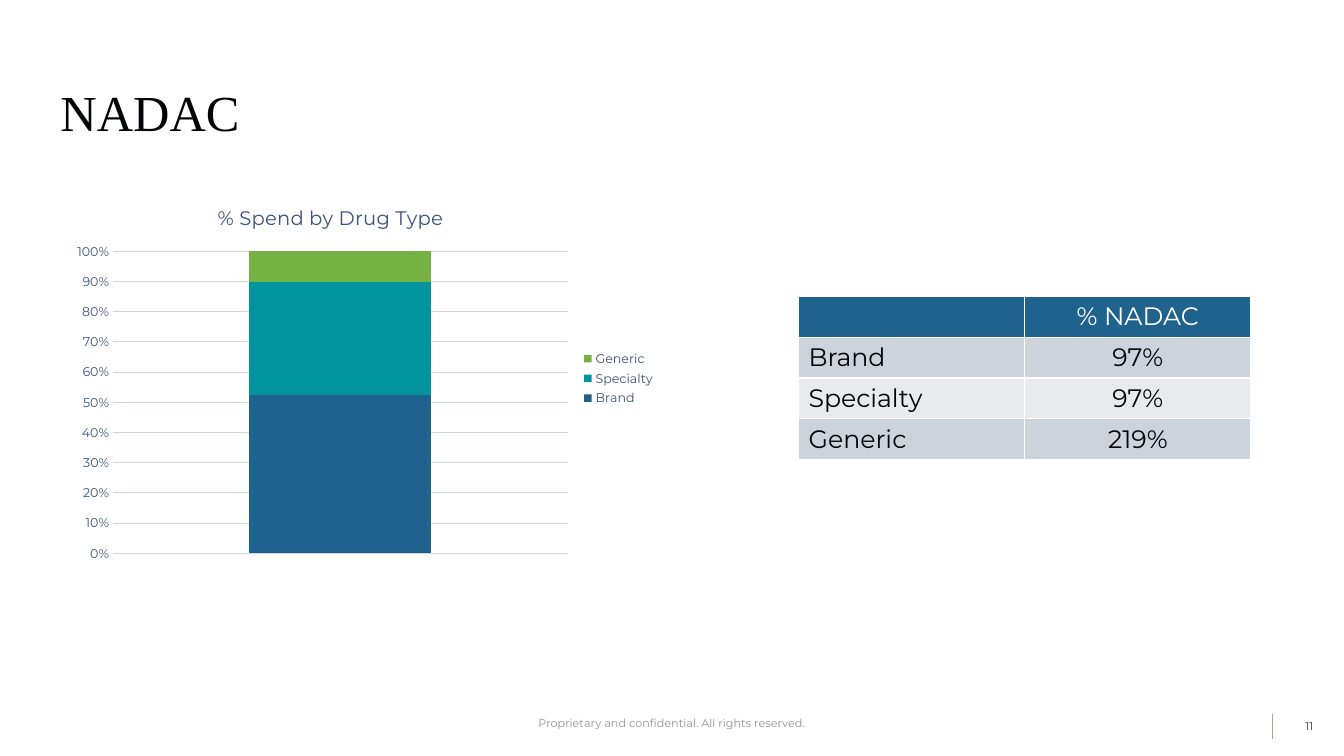
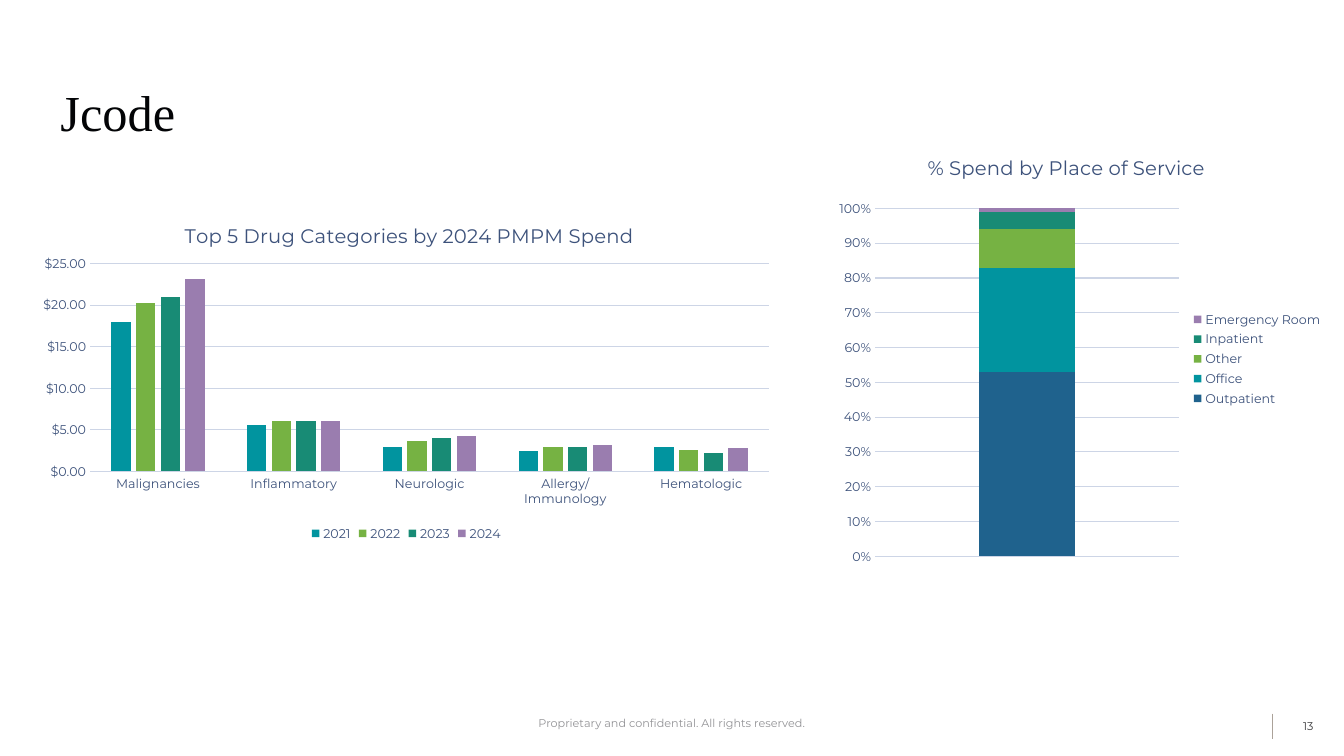
from pptx import Presentation
from pptx.chart.data import CategoryChartData
from pptx.dml.color import RGBColor
from pptx.enum.chart import XL_CHART_TYPE, XL_LEGEND_POSITION, XL_TICK_MARK
from pptx.enum.shapes import MSO_CONNECTOR
from pptx.enum.text import MSO_ANCHOR, PP_ALIGN
from pptx.oxml.ns import qn
from pptx.util import Pt
from lxml.etree import SubElement

SANS = "Montserrat"
SERIF = "Times New Roman"
INK = "030406"
LABEL = "3D527B"
GRID = "CDD5E6"
WHITE = "FFFFFF"
NAVY, TEAL, LIME, GREEN, PURPLE = "1F628D", "01949F", "76B243", "188B75", "9A7DAF"
BANDS = ("CDD3DB", "E8EAEE")
FOOTER = "Proprietary and confidential. All rights reserved."

SLIDES = [
    {
        "title": "NADAC",
        "number": "11",
        "charts": [
            {
                "title": "% Spend by Drug Type",
                "kind": XL_CHART_TYPE.COLUMN_STACKED_100,
                "frame": (46.8, 133.9, 428.4, 272.9),
                "title_at": (152.9, 143.5),
                "plot": (80.7, 179.6, 325, 215.7),
                "categories": ["1"],
                "series": [
                    ("Brand", [52], NAVY),
                    ("Specialty", [37], TEAL),
                    ("Generic", [10], LIME),
                ],
                "bars": {"gap_width": 150, "overlap": 100},
                "scale": {"minimum_scale": 0},
                "number_format": "0%",
                "legend": XL_LEGEND_POSITION.RIGHT,
                "show_categories": False,
            },
        ],
        "table": {
            "at": (570.4, 211.6),
            "column_width": 161.6,
            "row_height": 29.2,
            "rows": [
                ("", "% NADAC"),
                ("Brand", "97%"),
                ("Specialty", "97%"),
                ("Generic", "219%"),
            ],
        },
    },
    {
        "title": "Jcode",
        "number": "13",
        "charts": [
            {
                "title": "Top 5 Drug Categories by 2024 PMPM Spend",
                "kind": XL_CHART_TYPE.COLUMN_CLUSTERED,
                "frame": (20.2, 144.7, 540, 244.8),
                "title_at": (129.3, 156.4),
                "plot": (64.3, 188.2, 485, 148.6),
                "categories": ["Malignancies", "Inflammatory", "Neurologic",
                               "Allergy/Immunology", "Hematologic"],
                "series": [
                    ("2021", [17.9, 5.6, 2.9, 2.5, 2.9], TEAL),
                    ("2022", [20.3, 6.1, 3.7, 2.9, 2.6], LIME),
                    ("2023", [21, 6, 4, 2.9, 2.2], GREEN),
                    ("2024", [23.1, 6.1, 4.3, 3.2, 2.8], PURPLE),
                ],
                "bars": {"gap_width": 219, "overlap": -27},
                "scale": {"minimum_scale": 0, "maximum_scale": 25, "major_unit": 5},
                "number_format": '"$"#,##0.00',
                "legend": XL_LEGEND_POSITION.BOTTOM,
                "show_categories": True,
            },
            {
                "title": "% Spend by Place of Service",
                "kind": XL_CHART_TYPE.COLUMN_STACKED_100,
                "frame": (592.6, 103, 359.3, 306.7),
                "title_at": (660, 107.9),
                "plot": (625, 148.9, 217.1, 248.6),
                "categories": ["1"],
                "series": [
                    ("Outpatient", [53], NAVY),
                    ("Office", [30], TEAL),
                    ("Other", [11], LIME),
                    ("Inpatient", [5], GREEN),
                    ("Emergency Room", [1], PURPLE),
                ],
                "bars": {"gap_width": 219, "overlap": 100},
                "scale": {"minimum_scale": 0},
                "number_format": "0%",
                "legend": XL_LEGEND_POSITION.RIGHT,
                "show_categories": False,
            },
        ],
    },
]


def color(value):
    return RGBColor.from_string(value)


def points(values):
    return [Pt(value) for value in values]


def apply(target, values):
    for name, value in values.items():
        setattr(target, name, value)


def style_font(font, size, ink, face=SANS):
    apply(font, {"name": face, "size": Pt(size), "bold": False})
    font.color.rgb = color(ink)


def fill_solid(fill, value):
    fill.solid()
    fill.fore_color.rgb = color(value)


def style_line(line, value, width):
    line.color.rgb = color(value)
    line.width = Pt(width)


def add_text(page, frame, text, size, ink, face=SANS, align=PP_ALIGN.LEFT,
             anchor=MSO_ANCHOR.MIDDLE, margins=(0, 0, 0, 0)):
    box = page.shapes.add_textbox(*points(frame))
    sides = ("margin_left", "margin_top", "margin_right", "margin_bottom")
    apply(box.text_frame, {"word_wrap": True, "vertical_anchor": anchor,
                           **dict(zip(sides, points(margins)))})
    para = box.text_frame.paragraphs[0]
    para.alignment = align
    span = para.add_run()
    span.text = text
    style_font(span.font, size, ink, face)


def add_frame(page, title, number):
    add_text(page, (43.2, 18, 864, 86.4), title, 36, INK, SERIF,
             anchor=MSO_ANCHOR.BOTTOM, margins=(0, 3.6, 0, 3.6))
    add_text(page, (330, 512, 300, 9.4), FOOTER, 8, "939396", align=PP_ALIGN.CENTER)
    add_text(page, (909.4, 509.8, 28.8, 18), number, 8, "39393B", align=PP_ALIGN.RIGHT)
    rule = page.shapes.add_connector(MSO_CONNECTOR.STRAIGHT,
                                     *points((908.6, 509.8, 908.6, 527.8)))
    style_line(rule.line, "ABA299", 0.5)
    SubElement(rule._element.spPr, qn("a:effectLst"))


def place(parent, index, settings):
    layout = parent.find(qn("c:layout"))
    if layout is None:
        layout = parent.makeelement(qn("c:layout"))
        parent.insert(index, layout)
    manual = SubElement(layout, qn("c:manualLayout"))
    for name, value in settings.items():
        SubElement(manual, qn("c:" + name)).set("val", str(value))


def add_chart(page, info):
    data = CategoryChartData()
    data.categories = info["categories"]
    for name, values, _ in info["series"]:
        data.add_series(name, values)
    left, top, width, height = info["frame"]
    chart = page.shapes.add_chart(info["kind"], *points(info["frame"]), data).chart
    style_font(chart.font, 10, INK)

    chart.has_title = True
    para = chart.chart_title.text_frame.paragraphs[0]
    span = para.add_run()
    span.text = info["title"]
    style_font(span.font, 14, LABEL)
    x, y = info["title_at"]
    place(chart.chart_title._element, 1, {
        "xMode": "edge", "yMode": "edge",
        "x": (x - left) / width, "y": (y - top) / height})
    x, y, plot_width, plot_height = info["plot"]
    place(chart._chartSpace.chart.plotArea, 0, {
        "layoutTarget": "inner", "xMode": "edge", "yMode": "edge",
        "x": (x - left) / width, "y": (y - top) / height,
        "w": plot_width / width, "h": plot_height / height})

    plot = chart.plots[0]
    apply(plot, {"vary_by_categories": False, **info["bars"]})
    for series, (_, _, value) in zip(plot.series, info["series"]):
        fill_solid(series.format.fill, value)

    for axis in (chart.category_axis, chart.value_axis):
        apply(axis, {"major_tick_mark": XL_TICK_MARK.NONE,
                     "minor_tick_mark": XL_TICK_MARK.NONE})
        style_font(axis.tick_labels.font, 9, LABEL)
    style_line(chart.category_axis.format.line, GRID, 0.75)
    chart.category_axis.visible = info["show_categories"]
    value_axis = chart.value_axis
    apply(value_axis, {"has_major_gridlines": True, **info["scale"]})
    value_axis.format.line.fill.background()
    style_line(value_axis.major_gridlines.format.line, GRID, 0.75)
    apply(value_axis.tick_labels, {"number_format": info["number_format"],
                                   "number_format_is_linked": False})

    chart.has_legend = True
    apply(chart.legend, {"position": info["legend"], "include_in_layout": False})
    style_font(chart.legend.font, 9, LABEL)


def add_borders(cell):
    properties = cell._tc.get_or_add_tcPr()
    for index, side in enumerate(("lnL", "lnR", "lnT", "lnB")):
        line = properties.makeelement(qn("a:" + side), {"w": str(Pt(1))})
        properties.insert(index, line)
        solid = SubElement(line, qn("a:solidFill"))
        SubElement(solid, qn("a:srgbClr")).set("val", WHITE)


def add_table(page, info):
    rows = info["rows"]
    columns = len(rows[0])
    size = (columns * info["column_width"], len(rows) * info["row_height"])
    table = page.shapes.add_table(len(rows), columns, *points(info["at"] + size)).table
    for row_index, row in enumerate(rows):
        header = row_index == 0
        for column_index, text in enumerate(row):
            cell = table.cell(row_index, column_index)
            cell.vertical_anchor = MSO_ANCHOR.MIDDLE
            fill_solid(cell.fill, NAVY if header else BANDS[(row_index - 1) % 2])
            add_borders(cell)
            para = cell.text_frame.paragraphs[0]
            para.alignment = PP_ALIGN.CENTER if column_index else PP_ALIGN.LEFT
            style_font(para.font, 18, WHITE if header else INK)
            if text:
                span = para.add_run()
                span.text = text
                style_font(span.font, 18, WHITE if header else INK)


def main():
    deck = Presentation()
    apply(deck, {"slide_width": Pt(960), "slide_height": Pt(540)})
    for content in SLIDES:
        page = deck.slides.add_slide(deck.slide_layouts[6])
        add_frame(page, content["title"], content["number"])
        for info in content["charts"]:
            add_chart(page, info)
        if "table" in content:
            add_table(page, content["table"])
    deck.save("out.pptx")


if __name__ == "__main__":
    main()
